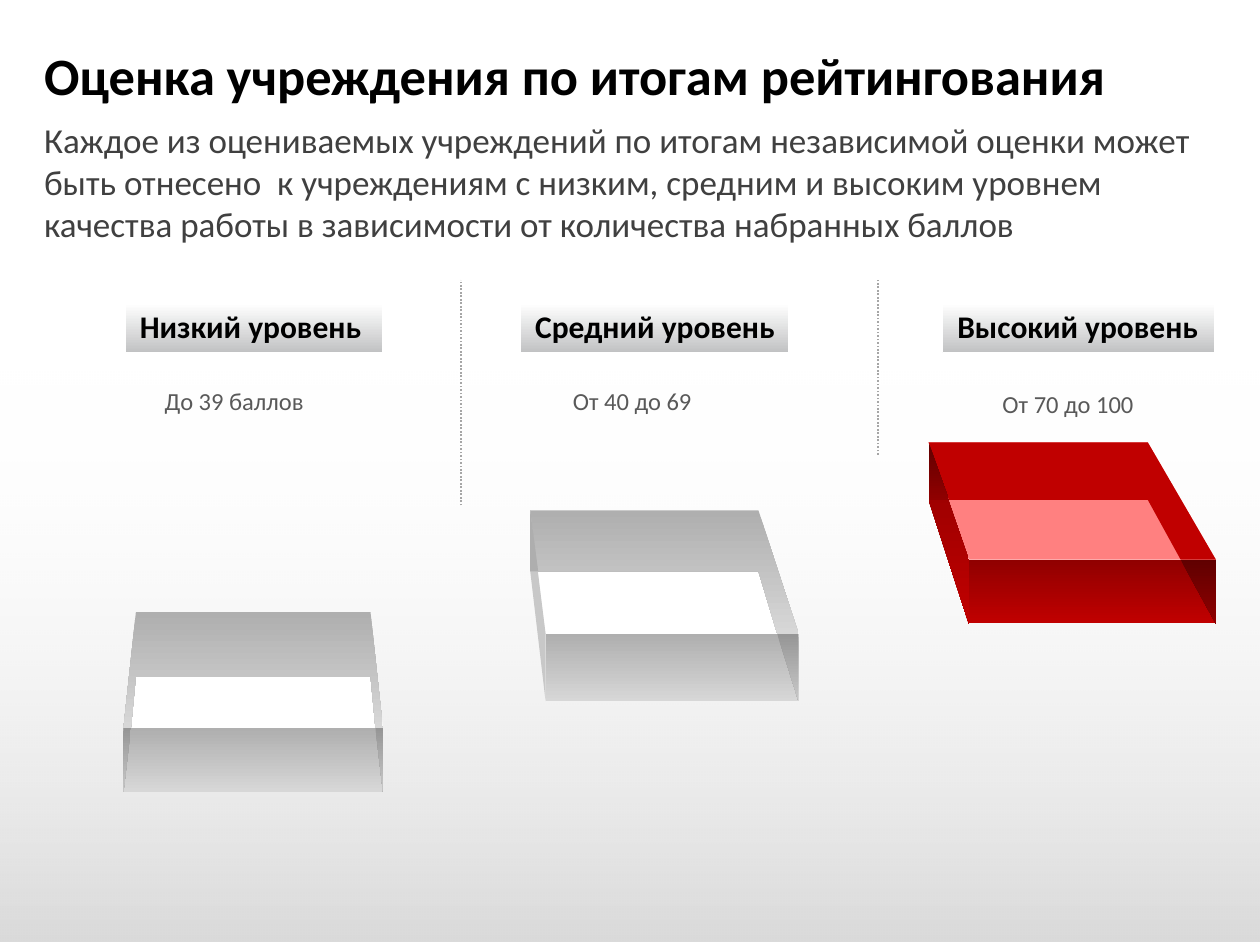
from lxml.etree import SubElement
from pptx import Presentation
from pptx.dml.color import RGBColor
from pptx.enum.dml import MSO_LINE
from pptx.enum.shapes import MSO_CONNECTOR, MSO_SHAPE
from pptx.enum.text import MSO_ANCHOR, PP_ALIGN
from pptx.oxml.ns import qn
from pptx.util import Cm, Pt

TITLE = "Оценка учреждения по итогам рейтингования"
INTRO = ("Каждое из оцениваемых учреждений по итогам независимой оценки может "
         "быть отнесено  к учреждениям с низким, средним и высоким уровнем "
         "качества работы в зависимости от количества набранных баллов")
LEVELS = [
    ("Низкий уровень", (2.52, 5.2), "До 39 баллов", (3.02, 7.32, 4.27, 3.63)),
    ("Средний уровень", (10.49, 5.41), "От 40 до 69", (11.25, 7.32, 4.65, 3.61)),
    ("Высокий уровень", (19, 5.49), "От 70 до 100", (19.91, 7.39, 5.38, 2.13)),
]
DIVIDERS = [(9.3, 5.64, 10.19), (17.7, 5.61, 9.17)]

GREY = ("AFAFAF", "D7D7D7")
GREY_SHADE = ("969696", "C8C8C8")
RED = ("900000", "C00000")
RED_SHADE = ("600000", "900000")


def skewed_box(back, inner, front, rows, floor, wall, side, rim, corner, shade):
    (back_l, back_r), (inner_l, inner_r), (front_l, front_r) = back, inner, front
    top, inner_top, edge, bottom = rows
    return [
        (floor, [(back_r, top), (back_l, top), (front_l, edge), (front_r, edge)]),
        (wall, [(front_l, edge), (front_r, bottom)]),
        (side, [(back_l, top), (back_l, inner_top), (front_l, bottom), (front_l, edge)]),
        (shade, [(front_r, edge), (inner_r, edge), (front_r, bottom)]),
        (rim, [(back_r, top), (back_l, top), (inner_l, inner_top), (back_r, inner_top),
               (inner_r, edge), (front_r, edge)]),
        (corner, [(back_l, top), (back_l, inner_top), (inner_l, inner_top)]),
    ]


LOW_BOX = [
    ("FFFFFF", [(7.47, 12.34), (2.74, 12.34), (2.49, 14.68), (7.72, 14.68)]),
    (GREY, [(2.49, 14.68), (7.72, 15.96)]),
    (GREY, [(7.47, 12.34), (2.74, 12.34), (2.49, 14.68), (2.64, 14.68), (2.74, 13.64),
            (7.47, 13.64), (7.57, 14.68), (7.72, 14.68)]),
    (GREY_SHADE, [(2.64, 14.68), (2.49, 14.68), (2.49, 15.96)]),
    (GREY_SHADE, [(7.72, 14.68), (7.57, 14.68), (7.72, 15.96)]),
]
MIDDLE_BOX = skewed_box((10.69, 15.29), (10.85, 15.67), (11, 16.1),
                        (10.29, 11.52, 12.78, 14.14),
                        "FFFFFF", GREY, "C8C8C8", GREY, "AEAEAE", GREY_SHADE)
HIGH_BOX = skewed_box((18.72, 23.14), (19.13, 23.8), (19.53, 24.51),
                      (8.92, 10.08, 11.28, 12.57),
                      "FF8080", RED, RED, "C00000", RED_SHADE, RED_SHADE)


def rgb(code):
    return RGBColor.from_string(code)


def paint(shape, colours, angle=270):
    shape.shadow.inherit = False
    shape.line.fill.background()
    if isinstance(colours, str):
        shape.fill.solid()
        shape.fill.fore_color.rgb = rgb(colours)
        return
    shape.fill.gradient()
    shape.fill.gradient_angle = angle
    for stop, colour in zip(shape.fill.gradient_stops, colours):
        stop.color.rgb = rgb(colour)


def add_rectangle(shapes, left, top, width, height):
    return shapes.add_shape(MSO_SHAPE.RECTANGLE, Cm(left), Cm(top), Cm(width), Cm(height))


def write(shape, text, size, colour, bold=False, insets=(0, 0, 0, 0),
          anchor=MSO_ANCHOR.TOP, spacing=None):
    frame = shape.text_frame
    frame.word_wrap = True
    frame.vertical_anchor = anchor
    frame.margin_left, frame.margin_top, frame.margin_right, frame.margin_bottom = map(Cm, insets)
    paragraph = frame.paragraphs[0]
    paragraph.alignment = PP_ALIGN.LEFT
    if spacing:
        paragraph.line_spacing = spacing
        paragraph.space_after = Pt(8)
    run = paragraph.add_run()
    run.text = text
    run.font.name = "Calibri"
    run.font.size = Pt(size)
    run.font.bold = bold
    run.font.color.rgb = rgb(colour)


def add_text(shapes, place, text, size, colour, **options):
    write(shapes.add_textbox(*map(Cm, place)), text, size, colour, **options)


def add_backdrop(slide):
    backdrop = add_rectangle(slide.shapes, 0, 7.32, 25.4, 11.66)
    paint(backdrop, ("000000", "FFFFFF"), angle=90)
    colours = backdrop.element.spPr.iter(qn("a:srgbClr"))
    for colour, alpha in zip(list(colours), ("15000", "0")):
        SubElement(colour, qn("a:alpha")).set("val", alpha)
    slide.shapes.title.element.addprevious(backdrop.element)


def add_divider(shapes, x, top, bottom):
    divider = shapes.add_connector(MSO_CONNECTOR.STRAIGHT, Cm(x), Cm(bottom), Cm(x), Cm(top))
    divider.line.color.rgb = rgb("A6A6A6")
    divider.line.width = Pt(1)
    divider.line.dash_style = MSO_LINE.ROUND_DOT
    SubElement(divider.element.spPr, qn("a:effectLst"))


def add_box(shapes, parts):
    box = shapes.add_group_shape().shapes
    for colours, points in parts:
        if len(points) == 2:
            (left, top), (right, bottom) = points
            face = add_rectangle(box, left, top, right - left, bottom - top)
        else:
            corners = [(Cm(x), Cm(y)) for x, y in points]
            outline = box.build_freeform(*corners[0])
            outline.add_line_segments(corners[1:], close=True)
            face = outline.convert_to_shape()
        paint(face, colours)


def main():
    deck = Presentation()
    deck.slide_width, deck.slide_height = Cm(25.4), Cm(19.05)
    slide = deck.slides.add_slide(deck.slide_layouts[5])
    shapes = slide.shapes

    title = shapes.title
    title.left, title.top, title.width, title.height = map(Cm, (0.89, 0.66, 23.6, 1.7))
    write(title, TITLE, 30, "000000", bold=True, anchor=MSO_ANCHOR.MIDDLE)
    add_backdrop(slide)
    add_text(shapes, (0.89, 2.39, 23.6, 2.74), INTRO, 20, "404040")

    for divider in DIVIDERS:
        add_divider(shapes, *divider)
    for level, (left, width), _, _ in LEVELS:
        header = add_rectangle(shapes, left, 6.12, width, 0.99)
        paint(header, ("FFFFFF", "C1C2C3"))
        header.line.color.rgb = rgb("FFFFFF")
        header.line.width = Pt(1)
        write(header, level, 18, "000000", bold=True, insets=(0.3, 0, 0.2, 0),
              anchor=MSO_ANCHOR.MIDDLE, spacing=0.95)
    for parts in (LOW_BOX, MIDDLE_BOX, HIGH_BOX):
        add_box(shapes, parts)
    for _, _, score, place in LEVELS:
        add_text(shapes, place, score, 14, "595959", insets=(0.3, 0.5, 0.2, 0), spacing=0.95)

    deck.save("out.pptx")


if __name__ == "__main__":
    main()
